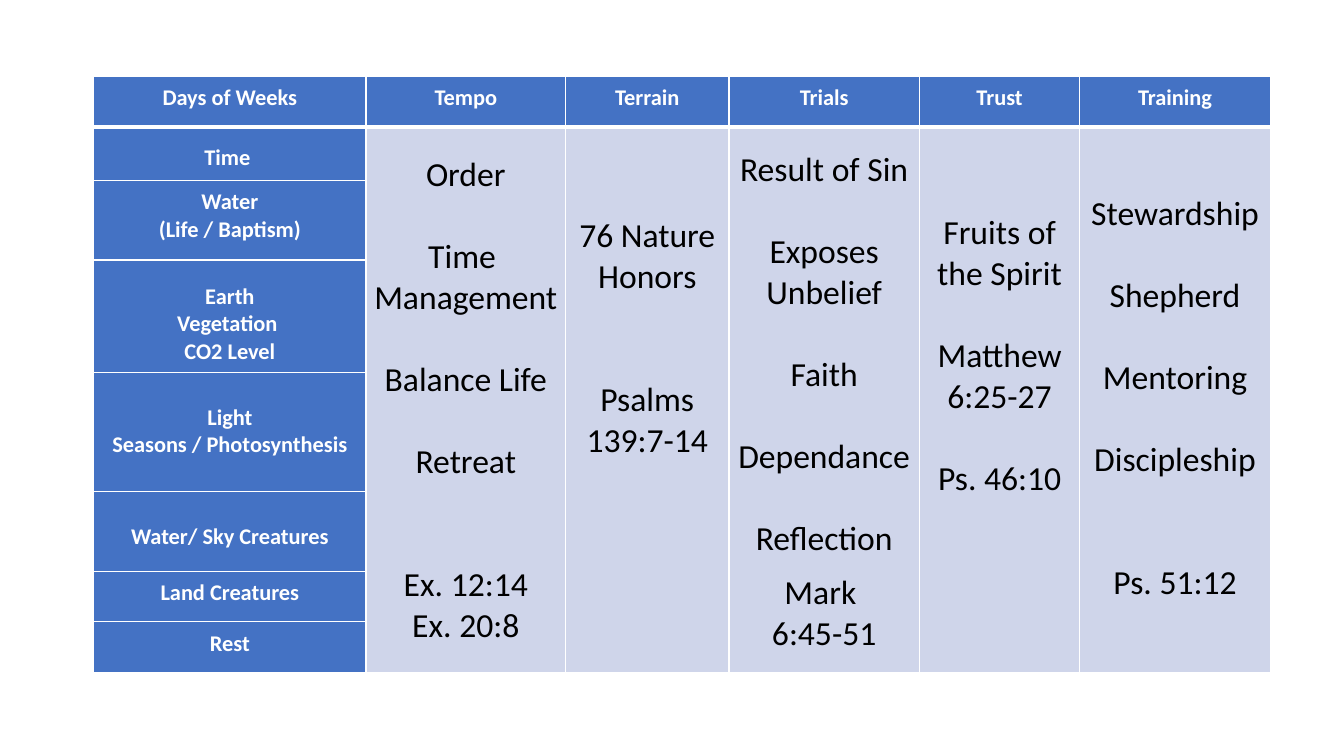
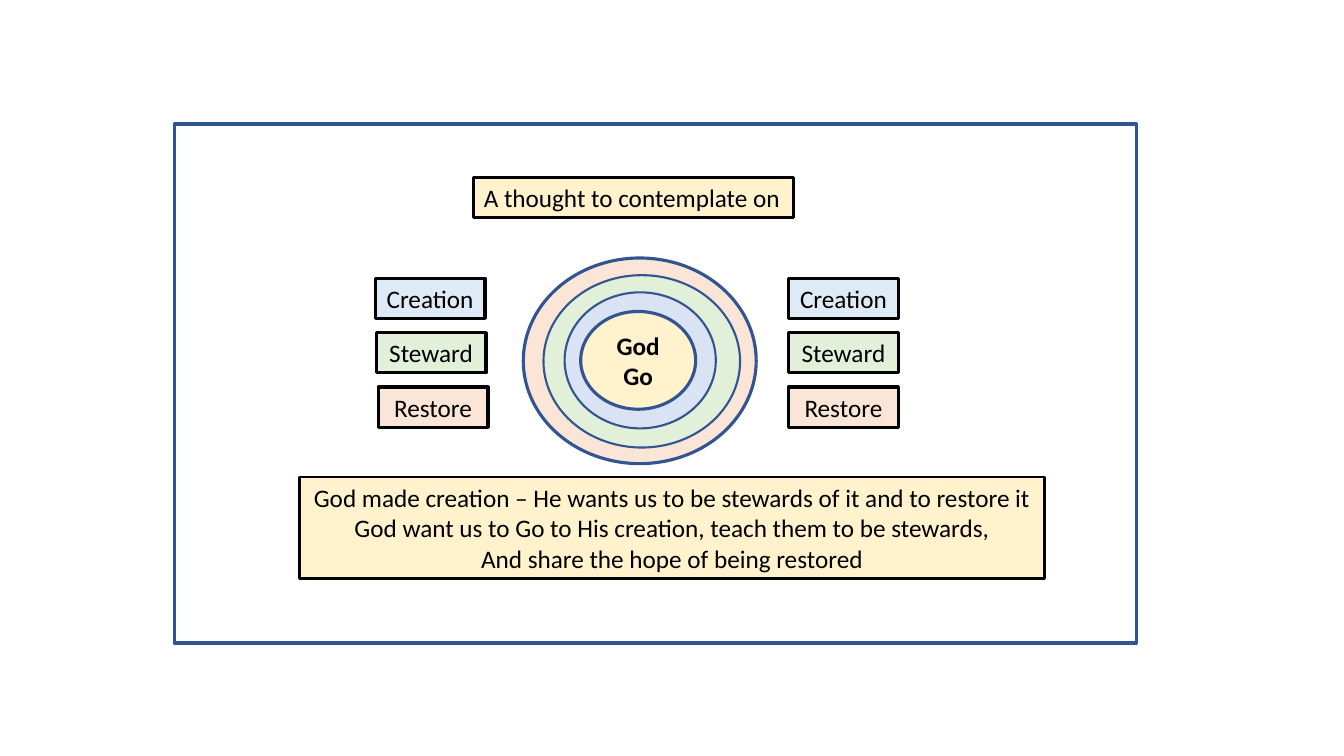
from lxml.etree import SubElement
from pptx import Presentation
from pptx.dml.color import RGBColor
from pptx.enum.shapes import MSO_SHAPE as Shape
from pptx.enum.text import MSO_ANCHOR as Anchor, PP_ALIGN as Align
from pptx.oxml.ns import qn
from pptx.util import Pt

EMU_PER_PX = 9144  # 100 px to the inch
FONT = "Calibri"
LINE_HEIGHT = 1.22  # line height of the font, in ems
COLORS = {
    "white": "FFFFFF", "black": "000000", "blue": "4472C4", "navy": "325491",
    "pale_blue": "CFD5EA", "cream": "FFF2CC", "peach": "FBE5D6",
    "green": "E2F0D9", "sky": "DEEBF7", "lavender": "DAE3F3",
}


def px(length):
    return length * EMU_PER_PX


def color(name):
    return RGBColor.from_string(COLORS[name])


class Deck:
    def __init__(self):
        self.presentation = Presentation()
        self.presentation.slide_width = px(1333)
        self.presentation.slide_height = px(750)
        self.slide = None

    def new_slide(self):
        self.slide = self.presentation.slides.add_slide(self.presentation.slide_layouts[6])

    def set_text(self, text_frame, lines, size, ink="black", bold=False, align=Align.CENTER, gaps=()):
        """Fill a text frame; gaps holds the blank space above each line, in lines."""
        text_frame.word_wrap = True
        text_frame.text = "\n".join(lines)
        for index, paragraph in enumerate(text_frame.paragraphs):
            paragraph.alignment = align
            if gaps and gaps[index]:
                paragraph.space_before = Pt(round(gaps[index] * size * LINE_HEIGHT, 1))
            for run in paragraph.runs:
                run.font.name = FONT
                run.font.size = Pt(size)
                run.font.bold = bold
                run.font.color.rgb = color(ink)

    def shape(self, kind, box, fill, line, weight, lines=(), bold=False, align=Align.CENTER):
        shape = self.slide.shapes.add_shape(kind, *map(px, box))
        shape.shadow.inherit = False
        if fill:
            shape.fill.solid()
            shape.fill.fore_color.rgb = color(fill)
        else:
            shape.fill.background()
        shape.line.color.rgb = color(line)
        shape.line.width = Pt(weight)
        if lines:
            self.set_text(shape.text_frame, lines, 18, bold=bold, align=align)
        return shape

    def table(self, left, top, widths, heights):
        frame = self.slide.shapes.add_table(
            len(heights), len(widths), px(left), px(top), px(sum(widths)), px(sum(heights)))
        table = frame.table
        table.horz_banding = False
        for column, width in zip(table.columns, widths):
            column.width = px(width)
        for row, height in zip(table.rows, heights):
            row.height = px(height)
        return table

    def cell_style(self, cell, fill, top_weight=1, bottom_weight=1):
        weights = {"a:lnL": 1, "a:lnR": 1, "a:lnT": top_weight, "a:lnB": bottom_weight}
        properties = cell._tc.get_or_add_tcPr()
        for tag, weight in weights.items():
            border = SubElement(properties, qn(tag), w=str(Pt(weight)))
            paint = SubElement(border, qn("a:solidFill"))
            SubElement(paint, qn("a:srgbClr"), val=COLORS["white"])
        cell.fill.solid()
        cell.fill.fore_color.rgb = color(fill)
        cell.margin_left = cell.margin_right = px(7)
        cell.margin_top = cell.margin_bottom = 0

    def cell_text(self, cell, margin_top, lines, size, **style):
        cell.vertical_anchor = Anchor.TOP
        cell.margin_top = px(margin_top)
        self.set_text(cell.text_frame, lines, size, **style)


HEADERS = ["Days of Weeks", "Tempo", "Terrain", "Trials", "Trust", "Training"]
# Row height, space above the text, lines
DAYS = [
    (53, 17, ["Time "]),
    (79, 8, ["Water", "(Life / Baptism)"]),
    (112, 23, ["Earth", "Vegetation ", "CO2 Level"]),
    (118, 31, ["Light", "Seasons / Photosynthesis"]),
    (79, 31, ["Water/ Sky Creatures"]),
    (50, 8, ["Land Creatures"]),
    (50, 8, ["Rest"]),
]
# Space above the text, then each line with the gap before it
TOPICS = [
    (27, {"Order": 0, "Time ": 1, "Management": 0, "Balance Life": 1, "Retreat": 1,
          "Ex. 12:14": 2, "Ex. 20:8": 0}),
    (88, {"76 Nature Honors": 0, "Psalms 139:7-14": 2}),
    (22, {"Result of Sin": 0, "Exposes": 1, "Unbelief": 0, "Faith": 1, "Dependance": 1,
          "Reflection": 1, "Mark ": 0.33, "6:45-51": 0}),
    (85, {"Fruits of the Spirit": 0, "Matthew 6:25-27": 1, "Ps. 46:10": 1}),
    (66, {"Stewardship": 0, "Shepherd": 1, "Mentoring": 1, "Discipleship": 1,
          "Ps. 51:12": 2}),
]


def build_week_table(deck):
    deck.new_slide()
    heights = [50] + [height for height, _, _ in DAYS]
    table = deck.table(93, 76, [270, 198, 162, 189, 159, 189], heights)
    for row in range(len(heights)):
        for column in range(len(HEADERS)):
            fill = "blue" if row == 0 or column == 0 else "pale_blue"
            deck.cell_style(table.cell(row, column), fill,
                            top_weight=3 if row == 1 else 1,
                            bottom_weight=3 if row == 0 else 1)
    # Header row and day column
    label = {"size": 16, "ink": "white", "bold": True}
    for column, header in enumerate(HEADERS):
        deck.cell_text(table.cell(0, column), 8, [header], **label)
    for row, (_, margin_top, lines) in enumerate(DAYS, 1):
        deck.cell_text(table.cell(row, 0), margin_top, lines, **label)
    # Topic columns, each one tall cell
    for column, (margin_top, lines) in enumerate(TOPICS, 1):
        cell = table.cell(1, column)
        cell.merge(table.cell(len(DAYS), column))
        deck.cell_text(cell, margin_top, list(lines), 24, gaps=list(lines.values()))


def build_thought(deck):
    deck.new_slide()
    # Rings around the centre
    for box, fill, weight in [
        ((519, 256, 231, 204), "peach", 2.25),
        ((539, 273, 195, 171), "green", 1.5),
        ((560, 290, 150, 135), "lavender", 1.5),
    ]:
        deck.shape(Shape.OVAL, box, fill, "navy", weight)
    center = deck.shape(Shape.OVAL, (576, 309, 114, 97), "cream", "navy", 2.25,
                        ["God", "Go"], bold=True)
    frame = center.text_frame
    frame.margin_left = frame.margin_right = frame.margin_top = frame.margin_bottom = 0

    # Labels on both sides
    labels = [("Creation", "sky", 372), ("Steward", "green", 373), ("Restore", "peach", 375)]
    for index, (word, fill, left) in enumerate(labels):
        for x in (left, 782):
            deck.shape(Shape.RECTANGLE, (x, 276 + 54 * index, 109, 40), fill, "black", 2.25, [word])

    # Heading, message and outer frame
    deck.shape(Shape.RECTANGLE, (470, 176, 317, 40), "cream", "black", 2.25,
               ["A thought to contemplate on"], align=Align.LEFT)
    deck.shape(Shape.RECTANGLE, (297, 473, 739, 101), "cream", "black", 1.5, [
        "God made creation – He wants us to be stewards of it and to restore it",
        "God want us to Go to His creation, teach them to be stewards,",
        "And share the hope of being restored",
    ])
    deck.shape(Shape.RECTANGLE, (173, 123, 954, 515), None, "navy", 2.25)


def main():
    deck = Deck()
    build_week_table(deck)
    build_thought(deck)
    deck.presentation.save("out.pptx")


if __name__ == "__main__":
    main()
